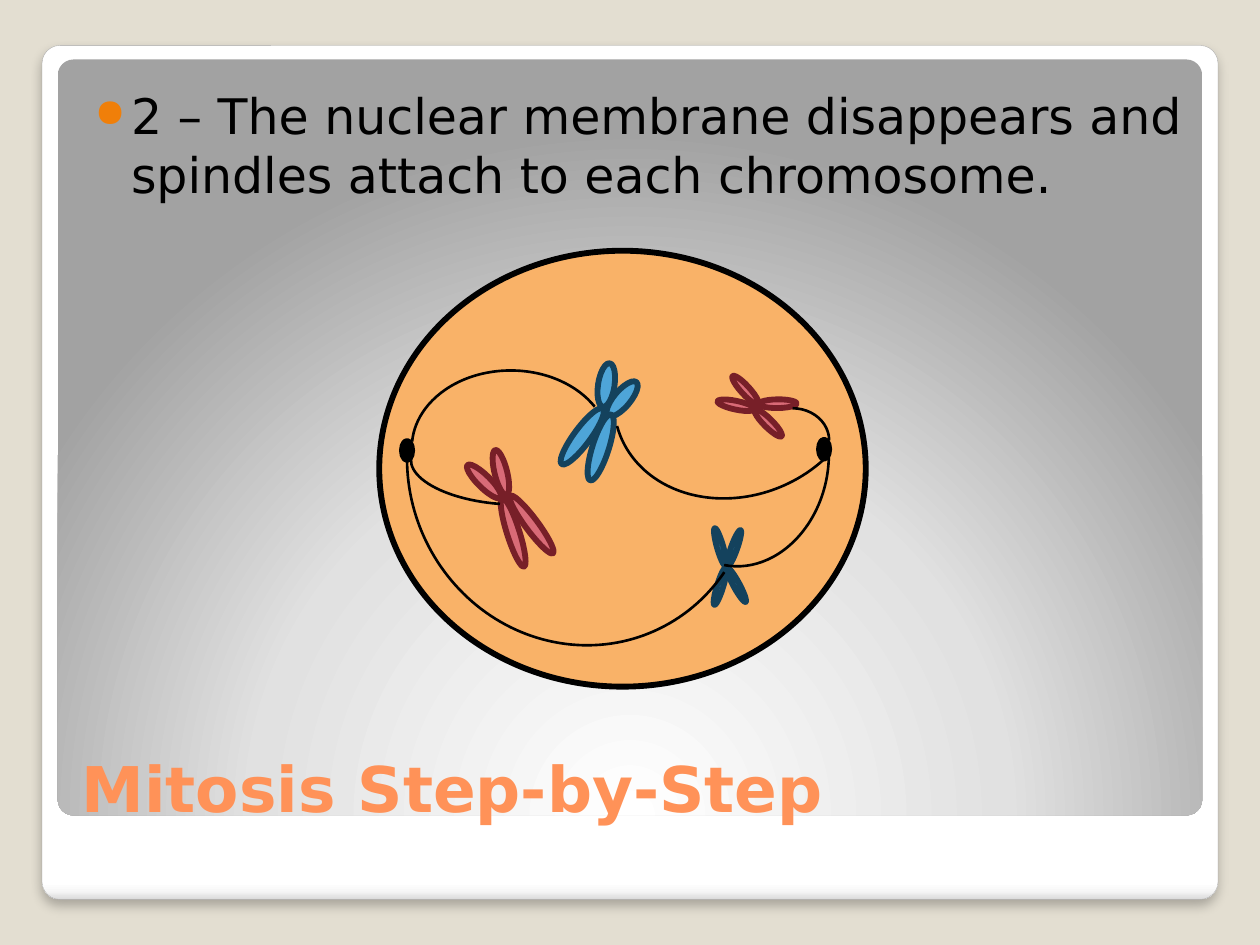
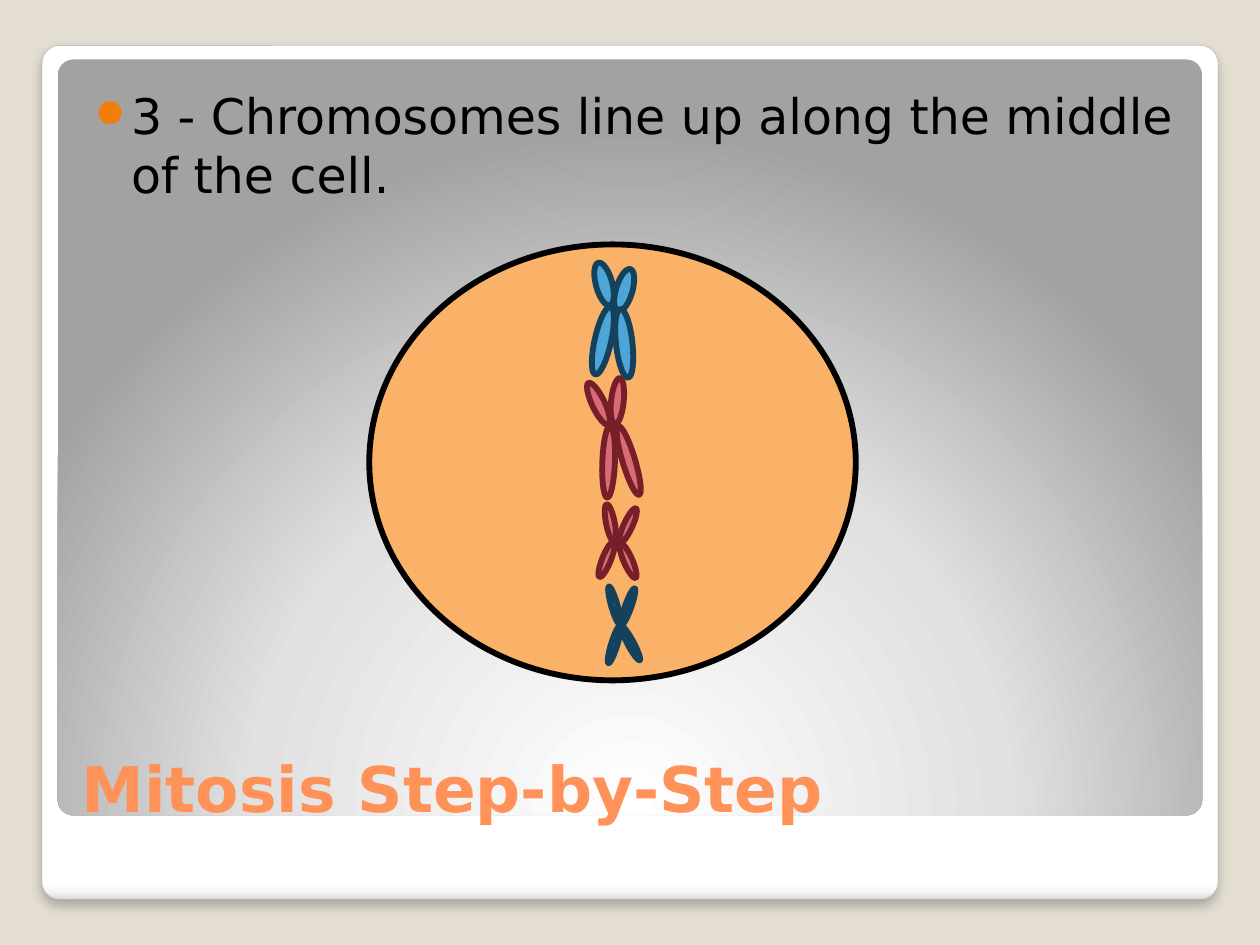
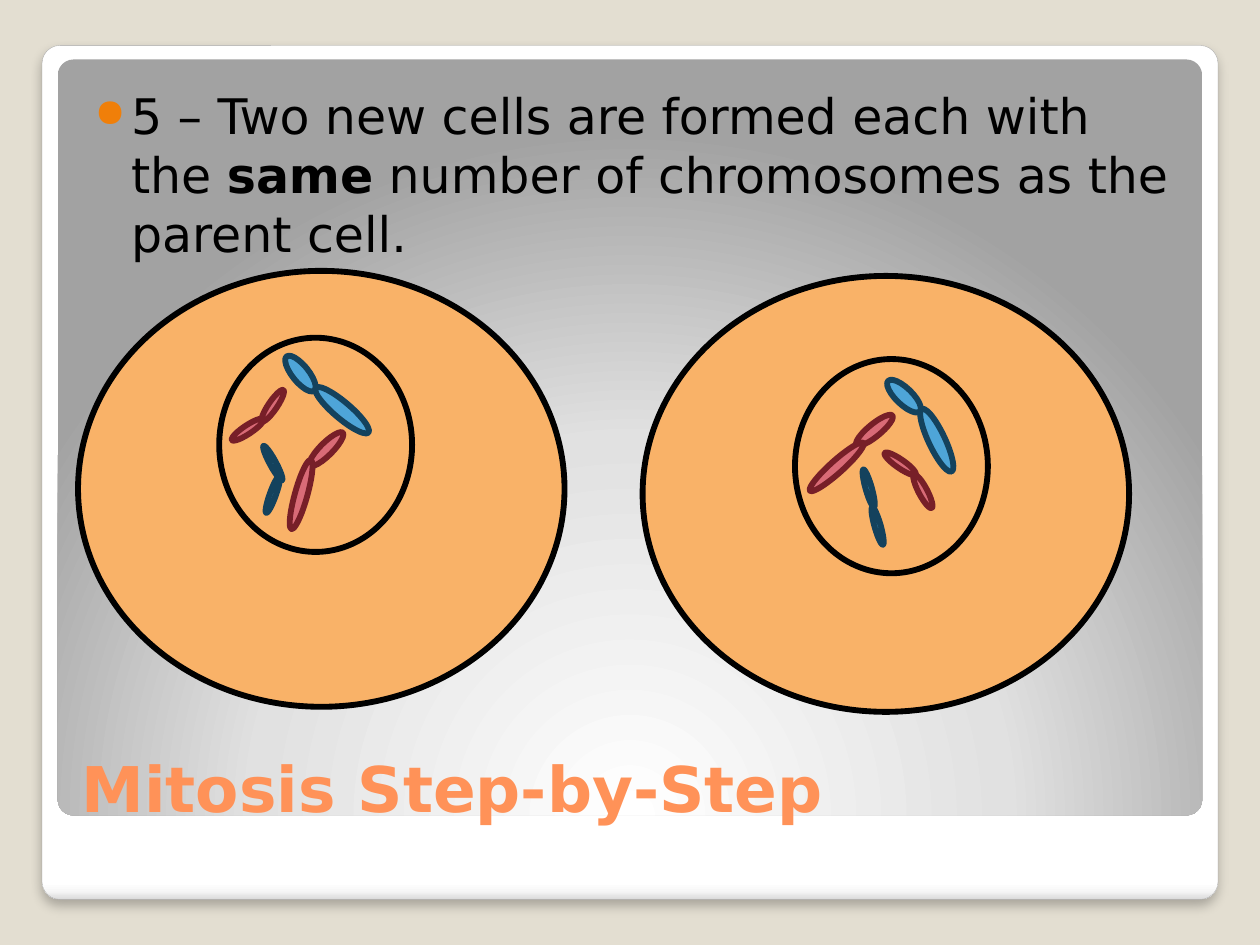
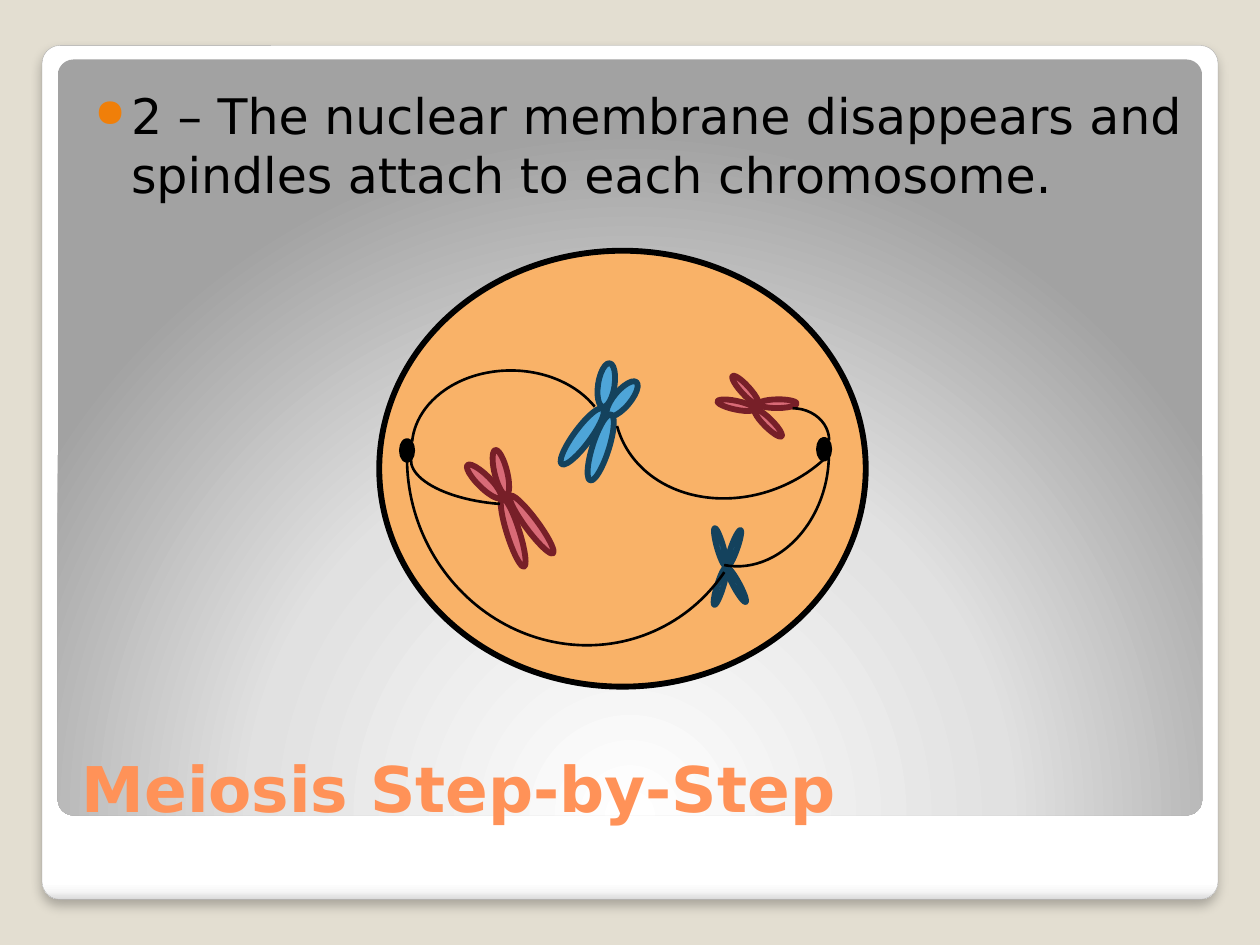
import math
from dataclasses import dataclass

from lxml import etree
from pptx import Presentation
from pptx.dml.color import RGBColor
from pptx.enum import shapes, text
from pptx.oxml import ns
from pptx.util import Pt

COLORS = {
    "page": "E3DED1", "white": "FFFFFF", "frame_line": "A4A4A4",
    "frame_low": "F7F7F7", "frame_edge": "DADADA",
    "panel_mid": "E1E1E1", "panel_edge": "A2A2A2",
    "title": "FF9258", "bullet": "F07F09", "ink": "000000",
    "cell": "F9B268", "blue": "4EA5D8", "blue_line": "14425D",
    "red": "D96B77", "red_line": "771F28",
}
FONT = "DejaVu Sans"
OUTLINE = 3.35
CELL_SIZE = (278, 249.1)
NUCLEUS_SIZE = (110.2, 122.4)
POLE_SIZE = (5.8, 10.8)


# Parts of the cell drawings
@dataclass(frozen=True)
class Kind:
    """A chromosome type: colour, arm sizes and the four arms of its X."""
    color: str
    width: float
    short: float
    long: float
    arms: tuple  # (dx, dy, angle); the first two are short, the others long


@dataclass(frozen=True)
class Chromosome:
    kind: Kind
    x: float
    y: float
    turn: float = 0


@dataclass(frozen=True)
class Chromatid:
    kind: Kind
    short: tuple  # centre x, centre y, angle
    long: tuple


@dataclass(frozen=True)
class Spindle:
    x: float
    y: float
    w: float
    h: float
    turn: float = 0
    start: float = 270
    end: float = 0


@dataclass(frozen=True)
class Step:
    title: str
    body: str  # bold words stand between double asterisks
    cells: tuple
    chromosomes: tuple = ()
    poles: tuple = ()
    spindles: tuple = ()
    chromatids: tuple = ()
    nuclei: tuple = ()


BIG_BLUE = Kind("blue", 9.4, 25.2, 39.6, (
    (-5.6, -17.5, 344.9), (5.9, -13.9, 16.3), (5.9, 16.4, 353.7), (-6.3, 14.9, 12.6)))
SMALL_BLUE = Kind("blue", 3.6, 22.3, 22.3, (
    (-4.3, -11.2, 344.1), (3.6, -10.4, 19.8), (-4.3, 11.2, 17.1), (5, 10.4, 331.6)))
BIG_RED = Kind("red", 7.2, 26.6, 41, (
    (-8.5, -16, 334.5), (2.3, -17.5, 5.9), (8.8, 16.4, 343.2), (-2.7, 17.1, 2.2)))
SMALL_RED = Kind("red", 5, 21.6, 21.6, (
    (-4.5, -11, 348.9), (5.6, -9.5, 24.6), (-6.7, 9.9, 21.9), (5.6, 10.6, 336.4)))


def spindle_step(title: str) -> Step:
    return Step(
        title,
        "2 – The nuclear membrane disappears and spindles attach to each chromosome.",
        cells=((216.7, 143.3),),
        chromosomes=(
            Chromosome(BIG_BLUE, 344.5, 238.3, 23.9),
            Chromosome(SMALL_BLUE, 415.8, 323.8),
            Chromosome(BIG_RED, 290, 287.3, -19.8),
            Chromosome(SMALL_RED, 432.5, 231.7, -67),
        ),
        poles=((229.7, 252), (468, 251.3)),
        spindles=(
            Spindle(235.4, 211.7, 113, 87.8, 0, 183.29, 334.19),
            Spindle(234.7, 244.1, 105.1, 43.9, 184.1),
            Spindle(432, 233.3, 41.8, 36.7),
            Spindle(365.8, 216.7, 118.8, 95.8, 101.1, 251.29),
            Spindle(349.2, 160.6, 146.2, 122.4, 157.9, 238.88, 4.87),
            Spindle(233.3, 162, 197.3, 207.4, 157.9, 238.88, 26.61),
        ),
    )


STEPS = (
    spindle_step("Mitosis Step-by-Step"),
    Step(
        "Mitosis Step-by-Step",
        "3 - Chromosomes line up along the middle of the cell.",
        cells=((211, 139.7),),
        chromosomes=(
            Chromosome(BIG_BLUE, 350.8, 179.8),
            Chromosome(SMALL_BLUE, 355.3, 357.1),
            Chromosome(BIG_RED, 350.5, 246.8),
            Chromosome(SMALL_RED, 353.3, 309.8),
        ),
    ),
    Step(
        "Mitosis Step-by-Step",
        "5 – Two new cells are formed each with the **same** number of "
        "chromosomes as the parent cell.",
        cells=((44.6, 154.8), (367.2, 157.7)),
        chromatids=(
            Chromatid(BIG_BLUE, (171.7, 213.5, 321.1), (195.5, 234.4, 310.3)),
            Chromatid(SMALL_BLUE, (155.9, 282.6, 19.8), (155.9, 264.6, 331.6)),
            Chromatid(BIG_RED, (186.5, 256.7, 45), (172.1, 282.6, 15.6)),
            Chromatid(SMALL_RED, (155.9, 231.8, 34.2), (141.5, 245.5, 236.4)),
            Chromatid(BIG_BLUE, (516.6, 226.4, 313.9), (535.3, 251.6, 334.7)),
            Chromatid(SMALL_BLUE, (496.4, 279, 344.1), (501.5, 300.6, 344.1)),
            Chromatid(BIG_RED, (499.7, 245.9, 50.7), (478.1, 266.8, 48.1)),
            Chromatid(SMALL_RED, (514.4, 265, 304.8), (527.4, 280.8, 332.2)),
        ),
        nuclei=((125.3, 193), (454.3, 205.2)),
    ),
    spindle_step("Meiosis Step-by-Step"),
)


# Drawing helpers
def rgb(name: str) -> RGBColor:
    return RGBColor.from_string(COLORS[name])


def add_preset(parent, preset, x: float, y: float, w: float, h: float,
               fill: str | None = None, line: str | None = None,
               weight: float = OUTLINE, turn: float = 0):
    sp = parent.shapes.add_shape(preset, Pt(x), Pt(y), Pt(w), Pt(h))
    sp.shadow.inherit = False
    sp.rotation = turn
    if fill:
        sp.fill.solid()
        sp.fill.fore_color.rgb = rgb(fill)
    else:
        sp.fill.background()
    if line:
        sp.line.color.rgb = rgb(line)
        sp.line.width = Pt(weight)
    else:
        sp.line.fill.background()
    return sp


def add_oval(parent, x: float, y: float, size: tuple, fill: str | None = None,
             line: str = "ink", turn: float = 0):
    return add_preset(parent, shapes.MSO_SHAPE.OVAL, x, y, *size, fill, line, turn=turn)


def sub(parent, tag: str, **attrs):
    values = {k: str(v) for k, v in attrs.items()}
    return etree.SubElement(parent, ns.qn(tag), values)


def set_gradient(sp, stops: tuple, centre: dict | None = None) -> None:
    """Shade from top to bottom, or outwards from a centre rectangle."""
    grad = etree.Element(ns.qn("a:gradFill"), rotWithShape="1")
    stop_list = sub(grad, "a:gsLst")
    for percent, color in stops:
        stop = sub(stop_list, "a:gs", pos=percent * 1000)
        sub(stop, "a:srgbClr", val=COLORS[color])
    if centre:
        sub(sub(grad, "a:path", path="circle"), "a:fillToRect", **centre)
    else:
        sub(grad, "a:lin", ang=90 * 60000, scaled=0)
    props = sp._element.spPr
    props.replace(props.find(ns.qn("a:noFill")), grad)


def set_shadow(sp) -> None:
    effects = sp._element.spPr.find(ns.qn("a:effectLst"))
    shadow = sub(effects, "a:outerShdw", blurRad=Pt(6), dist=Pt(4),
                 dir=90 * 60000, algn="t", rotWithShape=0)
    sub(sub(shadow, "a:srgbClr", val=COLORS["ink"]), "a:alpha", val=25000)


def add_text(slide, x: float, y: float, w: float, h: float, content: str,
             size: float, color: str, bold: bool = False):
    box = slide.shapes.add_textbox(Pt(x), Pt(y), Pt(w), Pt(h))
    tf = box.text_frame
    tf.word_wrap = True
    p = tf.paragraphs[0]
    for i, part in enumerate(content.split("**")):
        r = p.add_run()
        r.text = part
        r.font.name = FONT
        r.font.size = Pt(size)
        r.font.bold = bold or i % 2 == 1
        r.font.color.rgb = rgb(color)
    return tf


# Shared slide parts
def add_frame(slide) -> None:
    rounded = shapes.MSO_SHAPE.ROUNDED_RECTANGLE
    frame = add_preset(slide, rounded, 24, 26, 672, 488, line="frame_line", weight=0.16)
    set_gradient(frame, ((0, "white"), (98, "white"), (99, "frame_low"), (100, "frame_edge")))
    set_shadow(frame)
    panel = add_preset(slide, rounded, 33, 34, 654, 432)
    set_gradient(panel, ((0, "white"), (55, "panel_mid"), (100, "panel_edge")),
                 {"l": 50000, "t": 175000, "r": 50000, "b": -75000})
    for sp in (frame, panel):
        sp.adjustments[0] = 0.021


def add_title(slide, title: str) -> None:
    tf = add_text(slide, 39.6, 392.4, 644.4, 82.8, title, 36, "title", bold=True)
    tf.vertical_anchor = text.MSO_ANCHOR.BOTTOM


def add_body(slide, body: str) -> None:
    tf = add_text(slide, 39.6, 41.8, 644.4, 329.8, body, 28, "ink")
    tf.margin_left, tf.margin_top = Pt(14.4), Pt(7.2)
    p = tf.paragraphs[0]
    p.space_before = Pt(2.5)
    props = p._p.get_or_add_pPr()
    props.set("marL", str(Pt(20.9)))
    props.set("indent", str(-Pt(20.9)))
    sub(sub(props, "a:buClr"), "a:srgbClr", val=COLORS["bullet"])
    sub(props, "a:buSzPct", val=80000)
    sub(props, "a:buChar", char="●")


# Cell contents
def add_arm(parent, kind: Kind, length: float, cx: float, cy: float, turn: float) -> None:
    add_oval(parent, cx - kind.width / 2, cy - length / 2, (kind.width, length),
             kind.color, kind.color + "_line", turn % 360)


def add_chromosome(slide, c: Chromosome) -> None:
    group = slide.shapes.add_group_shape()
    cos, sin = math.cos(math.radians(c.turn)), math.sin(math.radians(c.turn))
    for i, (dx, dy, angle) in enumerate(c.kind.arms):
        length = c.kind.short if i < 2 else c.kind.long
        add_arm(group, c.kind, length, c.x + dx * cos - dy * sin,
                c.y + dx * sin + dy * cos, angle + c.turn)


def add_spindle(slide, s: Spindle) -> None:
    arc = add_preset(slide, shapes.MSO_SHAPE.ARC, s.x, s.y, s.w, s.h,
                     line="ink", weight=1.5, turn=s.turn)
    # One degree is 60000 units, and an adjustment of 1 is 100000
    arc.adjustments[0] = s.start * 0.6
    arc.adjustments[1] = s.end * 0.6


def add_step(prs, step: Step) -> None:
    slide = prs.slides.add_slide(prs.slide_layouts[6])
    add_frame(slide)
    add_title(slide, step.title)
    add_body(slide, step.body)
    for x, y in step.cells:
        add_oval(slide, x, y, CELL_SIZE, "cell")
    for chromosome in step.chromosomes:
        add_chromosome(slide, chromosome)
    for x, y in step.poles:
        add_oval(slide, x, y, POLE_SIZE, "ink")
    for spindle in step.spindles:
        add_spindle(slide, spindle)
    for c in step.chromatids:
        add_arm(slide, c.kind, c.kind.short, *c.short)
        add_arm(slide, c.kind, c.kind.long, *c.long)
    for x, y in step.nuclei:
        add_oval(slide, x, y, NUCLEUS_SIZE)


def main() -> None:
    prs = Presentation()
    prs.slide_width, prs.slide_height = Pt(720), Pt(540)
    page = prs.slide_master.background.fill
    page.solid()
    page.fore_color.rgb = rgb("page")
    for step in STEPS:
        add_step(prs, step)
    prs.save("out.pptx")


if __name__ == "__main__":
    main()
